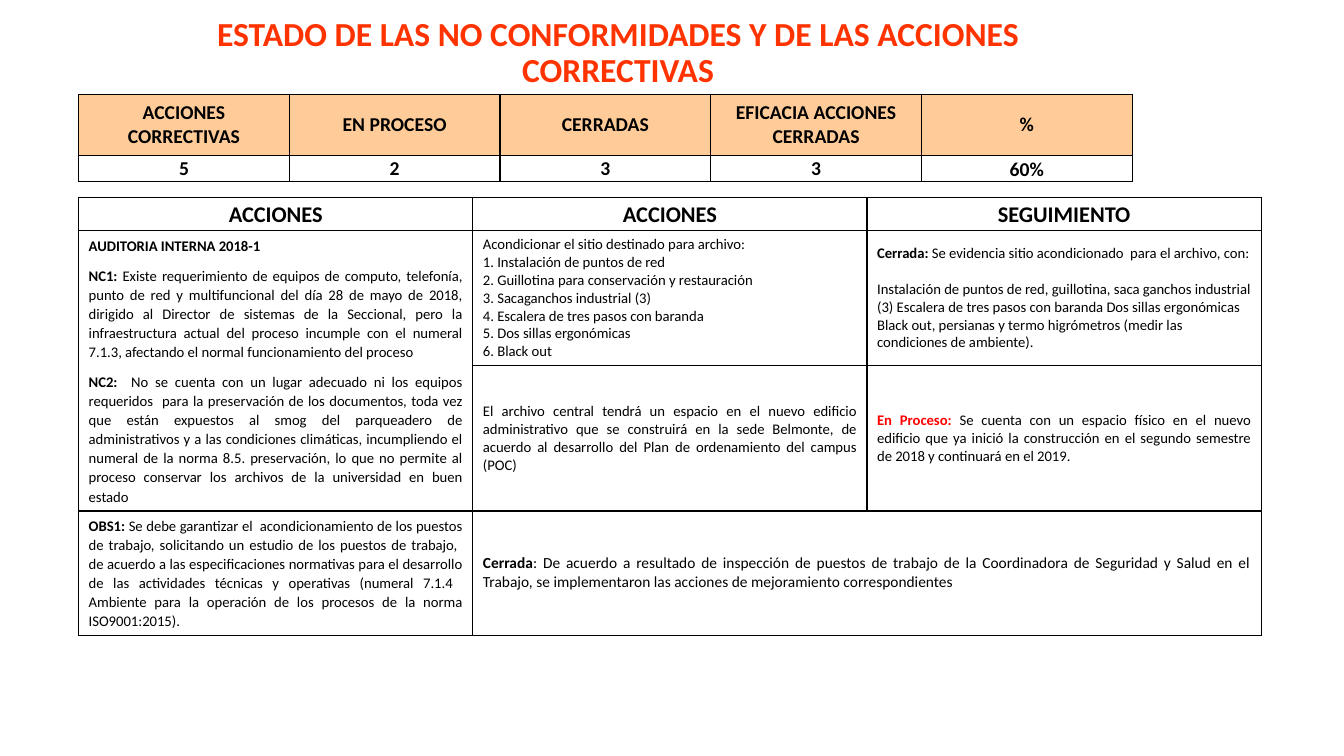
import pptx
import pptx.util
import pptx.oxml
import pptx.oxml.ns
import pptx.dml.color
import pptx.enum.text

Inches, Pt = pptx.util.Inches, pptx.util.Pt
ALIGN = pptx.enum.text.PP_ALIGN
ANCHOR = pptx.enum.text.MSO_ANCHOR
COLORS = {"title": "FF3300", "header": "FFCC99", "cell": "FFFFFF",
          "text": "000000", "pending": "FF0000", "border": "000000"}
FONT = "Calibri"
LEFT = 0.78

BODY = {"alignment": ALIGN.JUSTIFY}
FINDING = {"alignment": ALIGN.JUSTIFY, "line_spacing": 1.07, "space_after": Pt(8)}
HEADING = {"alignment": ALIGN.CENTER, "line_spacing": 1.07}
PLAIN = {"alignment": ALIGN.LEFT}
CENTERED = {"alignment": ALIGN.CENTER}


def write_cell(cell, paragraphs, layout, size, fill="cell", lead_color="text", margins=None):
    """Fill a bordered cell with paragraphs, each a (bold lead, regular rest) pair."""
    cell.fill.solid()
    cell.fill.fore_color.rgb = pptx.dml.color.RGBColor.from_string(COLORS[fill])
    cell.vertical_anchor = ANCHOR.MIDDLE
    if margins is not None:
        cell.margin_left = cell.margin_right = Inches(margins)
        cell.margin_top = cell.margin_bottom = 0
    properties = cell._tc.get_or_add_tcPr()
    for position, side in enumerate("LRTB"):
        properties.insert(position, pptx.oxml.parse_xml(
            f'<a:ln{side} {pptx.oxml.ns.nsdecls("a")} w="12700"><a:solidFill>'
            f'<a:srgbClr val="{COLORS["border"]}"/></a:solidFill></a:ln{side}>'))
    frame = cell.text_frame
    for number, (lead, rest) in enumerate(paragraphs):
        paragraph = frame.add_paragraph() if number else frame.paragraphs[0]
        for attribute, value in layout.items():
            setattr(paragraph, attribute, value)
        for words, bold, color in ((lead, True, lead_color), (rest, False, "text")):
            for line_number, line in enumerate(words.split("\n") if words else []):
                if line_number:
                    paragraph.add_line_break()
                run = paragraph.add_run()
                run.text = line
                style = {"name": FONT, "size": Pt(size), "bold": bold}
                for attribute, value in style.items():
                    setattr(run.font, attribute, value)
                run.font.color.rgb = pptx.dml.color.RGBColor.from_string(COLORS[color])


def add_grid(slide, top, column_width, column_count, row_heights, frame_height):
    frame = slide.shapes.add_table(len(row_heights), column_count, Inches(LEFT), Inches(top),
                                   Inches(column_width * column_count), Inches(frame_height))
    for column in frame.table.columns:
        column.width = Inches(column_width)
    for row, height in zip(frame.table.rows, row_heights):
        row.height = Inches(height)
    frame.height = Inches(frame_height)
    return frame.table


deck = pptx.Presentation()
deck.slide_width, deck.slide_height = Inches(13.33), Inches(7.5)
slide = deck.slides.add_slide(deck.slide_layouts[5])

# Title
title = slide.shapes.title
title.left, title.top, title.width, title.height = map(Inches, (1.19, 0.31, 9.88, 0.63))
heading = title.text_frame
heading.text = "ESTADO DE LAS NO CONFORMIDADES Y DE LAS ACCIONES CORRECTIVAS"
heading.auto_size = pptx.enum.text.MSO_AUTO_SIZE.NONE
heading.word_wrap = True
heading.vertical_anchor = ANCHOR.BOTTOM
heading.paragraphs[0].alignment = ALIGN.CENTER
heading.paragraphs[0].line_spacing = 0.9
heading_font = heading.paragraphs[0].runs[0].font
for attribute, value in {"name": FONT, "size": Pt(24), "bold": True}.items():
    setattr(heading_font, attribute, value)
heading_font.color.rgb = pptx.dml.color.RGBColor.from_string(COLORS["title"])

# Summary of corrective actions
totals = [("ACCIONES\nCORRECTIVAS", "5"), ("EN PROCESO", "2"), ("CERRADAS", "3"),
          ("EFICACIA ACCIONES CERRADAS", "3"), ("%", "60%")]
summary = add_grid(slide, 0.94, 2.09, len(totals), (0.6, 0.26), 0.86)
for column, (label, total) in enumerate(totals):
    write_cell(summary.cell(0, column), [(label, "")], CENTERED, 14, fill="header", margins=0)
    write_cell(summary.cell(1, column), [(total, "")], CENTERED, 14, margins=0)
summary.cell(1, len(totals) - 1).vertical_anchor = ANCHOR.BOTTOM

# Findings, actions and follow-up
detail = add_grid(slide, 1.96, 3.91, 3, (0.33, 1.09, 1.28, 0.77), 4.31)
for column, label in enumerate(("ACCIONES", "ACCIONES", "SEGUIMIENTO")):
    write_cell(detail.cell(0, column), [(label, "")], HEADING, 16, margins=0.04)

nonconformities = [
    ("AUDITORIA INTERNA 2018-1", ""),
    ("NC1: ", "Existe requerimiento de equipos de computo, telefonía, punto de red y "
     "multifuncional del día 28 de mayo de 2018, dirigido al Director de sistemas de la "
     "Seccional, pero la infraestructura actual del proceso incumple con el numeral 7.1.3, "
     "afectando el normal funcionamiento del proceso"),
    ("NC2:  ", "No se cuenta con un lugar adecuado ni los equipos requeridos  para la "
     "preservación de los documentos, toda vez que están expuestos al smog del parqueadero de "
     "administrativos y a las condiciones climáticas, incumpliendo el numeral de la norma 8.5. "
     "preservación, lo que no permite al proceso conservar los archivos de la universidad en "
     "buen estado"),
]
archive_actions = [("", "Acondicionar el sitio destinado para archivo:\n"
                    "1. Instalación de puntos de red\n"
                    "2. Guillotina para conservación y restauración\n"
                    "3. Sacaganchos industrial (3)\n"
                    "4. Escalera de tres pasos con baranda\n"
                    "5. Dos sillas ergonómicas\n"
                    "6. Black out")]
archive_followup = [
    ("Cerrada: ", "Se evidencia sitio acondicionado  para el archivo, con:"),
    ("", "Instalación de puntos de red, guillotina, saca ganchos industrial (3) Escalera de tres "
     "pasos con baranda Dos sillas ergonómicas Black out, persianas y termo higrómetros (medir "
     "las condiciones de ambiente)."),
]
building_action = [("", "El archivo central tendrá un espacio en el nuevo edificio administrativo "
                    "que se construirá en la sede Belmonte, de acuerdo al desarrollo del Plan de "
                    "ordenamiento del campus (POC)")]
building_followup = [("En Proceso: ", "Se cuenta con un espacio físico en el nuevo edificio que ya "
                      "inició la construcción en el segundo semestre de 2018 y continuará en el "
                      "2019.")]
observation = [("OBS1: ", "Se debe garantizar el  acondicionamiento de los puestos de trabajo, "
                "solicitando un estudio de los puestos de trabajo,  de acuerdo a las "
                "especificaciones normativas para el desarrollo de las actividades técnicas y "
                "operativas (numeral 7.1.4  Ambiente para la operación de los procesos de la norma "
                "ISO9001:2015).")]
observation_followup = [("Cerrada", ": De acuerdo a resultado de inspección de puestos de trabajo "
                         "de la Coordinadora de Seguridad y Salud en el Trabajo, se implementaron "
                         "las acciones de mejoramiento correspondientes")]

entries = [
    (1, 0, nonconformities, FINDING, 10.5, "text"),
    (1, 1, archive_actions, PLAIN, 10.5, "text"),
    (1, 2, archive_followup, PLAIN, 10.5, "text"),
    (2, 0, [], FINDING, 10.5, "text"),
    (2, 1, building_action, BODY, 10.5, "text"),
    (2, 2, building_followup, BODY, 10.5, "pending"),
    (3, 0, observation, FINDING, 10.5, "text"),
    (3, 1, observation_followup, BODY, 11, "text"),
    (3, 2, [], BODY, 11, "text"),
]
for row, column, paragraphs, layout, size, lead_color in entries:
    write_cell(detail.cell(row, column), paragraphs, layout, size, lead_color=lead_color)
detail.cell(1, 2).text_frame.paragraphs[1].space_before = Pt(12.8)
detail.cell(1, 0).merge(detail.cell(2, 0))
detail.cell(3, 1).merge(detail.cell(3, 2))

deck.save("out.pptx")
